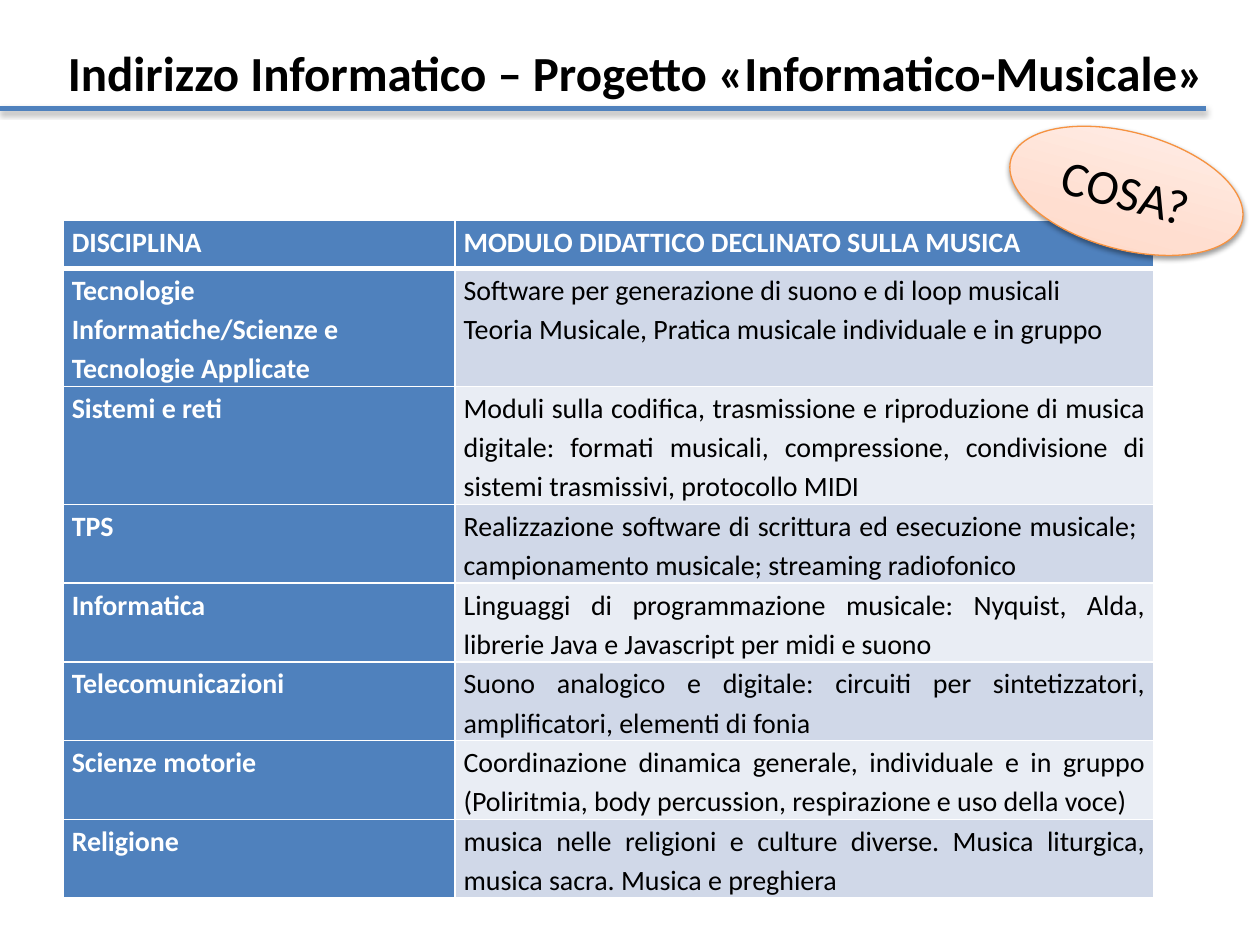
from pptx import Presentation
from pptx.dml.color import RGBColor
from pptx.enum.shapes import MSO_CONNECTOR, MSO_SHAPE
from pptx.enum.text import MSO_ANCHOR, PP_ALIGN
from pptx.oxml import parse_xml
from pptx.oxml.ns import nsdecls
from pptx.util import Inches, Pt

LEFT, CENTER, JUSTIFY = PP_ALIGN.LEFT, PP_ALIGN.CENTER, PP_ALIGN.JUSTIFY
TOP, MIDDLE = MSO_ANCHOR.TOP, MSO_ANCHOR.MIDDLE

BLACK = RGBColor(0x00, 0x00, 0x00)
WHITE = RGBColor(0xFF, 0xFF, 0xFF)
BLUE = RGBColor(0x4F, 0x81, 0xBD)
ORANGE = RGBColor(0xF6, 0x92, 0x40)
BANDS = (RGBColor(0xD0, 0xD8, 0xE8), RGBColor(0xE9, 0xED, 0xF4))
PEACH_STOPS = (
    (0, RGBColor(0xFF, 0xD2, 0xBD)),
    (35, RGBColor(0xFF, 0xDE, 0xD0)),
    (100, RGBColor(0xFF, 0xF2, 0xED)),
)

COLUMNS, ROWS = 100, 75
HEADER_ROW, TEXT_LINE = 3.8, 3.05

HEADERS = ("DISCIPLINA", "MODULO DIDATTICO DECLINATO SULLA MUSICA")
# Subject, teaching module, number of text lines
MODULES = (
    ("Tecnologie Informatiche/Scienze e Tecnologie Applicate",
     "Software per generazione di suono e di loop musicali\n"
     "Teoria Musicale, Pratica musicale individuale e in gruppo", 3),
    ("Sistemi e reti",
     "Moduli sulla codifica, trasmissione e riproduzione di musica digitale: "
     "formati musicali, compressione, condivisione di sistemi trasmissivi, "
     "protocollo MIDI", 3),
    ("TPS",
     "Realizzazione software di scrittura ed esecuzione musicale;  "
     "campionamento musicale; streaming radiofonico", 2),
    ("Informatica",
     "Linguaggi di programmazione musicale: Nyquist, Alda, "
     "librerie Java e Javascript per midi e suono", 2),
    ("Telecomunicazioni",
     "Suono analogico e digitale: circuiti per sintetizzatori, "
     "amplificatori, elementi di fonia", 2),
    ("Scienze motorie",
     "Coordinazione dinamica generale, individuale e in gruppo "
     "(Poliritmia, body percussion, respirazione e uso della voce)", 2),
    ("Religione",
     "musica nelle religioni e culture diverse. Musica liturgica, "
     "musica sacra. Musica e preghiera", 2),
)


def write(frame, text, size=16, color=BLACK, bold=False, align=LEFT, spacing=1.0):
    """Fill a text frame, one paragraph for each line of the text."""
    frame.word_wrap = True
    for index, line in enumerate(text.split("\n")):
        para = frame.add_paragraph() if index else frame.paragraphs[0]
        para.alignment = align
        para.line_spacing = spacing
        span = para.add_run()
        span.text = line
        span.font.name = "Calibri"
        span.font.size = Pt(size)
        span.font.bold = bold
        span.font.color.rgb = color


def add_shadow(shape, opacity, blur, distance):
    """Give a shape a black shadow that falls straight down."""
    shape._element.spPr.append(parse_xml(
        f'<a:effectLst {nsdecls("a")}><a:outerShdw blurRad="{Pt(blur)}" '
        f'dist="{Pt(distance)}" dir="5400000" rotWithShape="0">'
        f'<a:srgbClr val="{BLACK}"><a:alpha val="{opacity * 1000}"/></a:srgbClr>'
        f'</a:outerShdw></a:effectLst>'))


def add_upward_gradient(shape, stops):
    stop_xml = "".join(
        f'<a:gs pos="{share * 1000}"><a:srgbClr val="{color}"/></a:gs>'
        for share, color in stops)
    geometry = shape._element.spPr.prstGeom
    geometry.addnext(parse_xml(
        f'<a:gradFill {nsdecls("a")} rotWithShape="1"><a:gsLst>{stop_xml}</a:gsLst>'
        f'<a:lin ang="16200000" scaled="0"/></a:gradFill>'))


def add_borders(cell, bottom):
    properties = cell._tc.get_or_add_tcPr()
    for side, width in (("L", 1), ("R", 1), ("T", 1), ("B", bottom)):
        properties.append(parse_xml(
            f'<a:ln{side} {nsdecls("a")} w="{Pt(width)}"><a:solidFill>'
            f'<a:srgbClr val="{WHITE}"/></a:solidFill></a:ln{side}>'))


class SlideBuilder:
    """Holds the deck's grid and the current slide."""

    def __init__(self, deck):
        self.column = deck.slide_width / COLUMNS
        self.row = deck.slide_height / ROWS
        self.slide = deck.slides.add_slide(deck.slide_layouts[5])

    def across(self, columns):
        return round(columns * self.column)

    def down(self, rows):
        return round(rows * self.row)

    def area(self, left, top, width, height):
        return self.across(left), self.down(top), self.across(width), self.down(height)

    def title(self, text, *area):
        box = self.slide.shapes.title
        box.left, box.top, box.width, box.height = self.area(*area)
        box.text_frame.vertical_anchor = TOP
        write(box.text_frame, text, size=28, bold=True, align=CENTER)

    def rule(self, right, top):
        line = self.slide.shapes.add_connector(
            MSO_CONNECTOR.STRAIGHT, 0, self.down(top), self.across(right), self.down(top))
        line.line.color.rgb = BLUE
        line.line.width = Pt(3)
        add_shadow(line, opacity=35, blur=3.1, distance=1.8)

    def cell(self, cell, text, fill, color, bold=False, align=LEFT, bottom=1):
        add_borders(cell, bottom)
        cell.fill.solid()
        cell.fill.fore_color.rgb = fill
        cell.margin_left = cell.margin_right = Inches(0.07)
        cell.margin_top = cell.margin_bottom = 0
        write(cell.text_frame, text, color=color, bold=bold, align=align, spacing=1.15)

    def module_table(self, left, top, widths):
        heights = [HEADER_ROW] + [lines * TEXT_LINE for _, _, lines in MODULES]
        table = self.slide.shapes.add_table(
            len(heights), len(widths),
            *self.area(left, top, sum(widths), sum(heights))).table
        for column, width in zip(table.columns, widths):
            column.width = self.across(width)
        for row, height in zip(table.rows, heights):
            row.height = self.down(height)
        for index, (text, align) in enumerate(zip(HEADERS, (LEFT, JUSTIFY))):
            self.cell(table.cell(0, index), text, BLUE, WHITE, True, align, bottom=3)
        for index, (subject, module, _) in enumerate(MODULES):
            self.cell(table.cell(index + 1, 0), subject, BLUE, WHITE, bold=True)
            self.cell(table.cell(index + 1, 1), module, BANDS[index % 2], BLACK,
                      align=JUSTIFY)

    def badge(self, text, *area, rotation):
        oval = self.slide.shapes.add_shape(MSO_SHAPE.OVAL, *self.area(*area))
        oval.rotation = rotation
        add_upward_gradient(oval, PEACH_STOPS)
        oval.line.color.rgb = ORANGE
        oval.line.width = Pt(0.75)
        add_shadow(oval, opacity=38, blur=3.1, distance=1.6)
        oval.text_frame.vertical_anchor = MIDDLE
        write(oval.text_frame, text, size=28, align=CENTER)


def main():
    deck = Presentation()
    deck.slide_width, deck.slide_height = Inches(10), Inches(7.5)
    page = SlideBuilder(deck)
    page.title("Indirizzo Informatico – Progetto «Informatico-Musicale»", 4, 2.9, 92.9, 5.7)
    page.rule(right=95.7, top=8.6)
    page.module_table(left=5, top=17.5, widths=(31.1, 55.5))
    page.badge("COSA?", 79.9, 10.5, 19, 9.3, rotation=15.1)
    deck.save("out.pptx")


if __name__ == "__main__":
    main()
